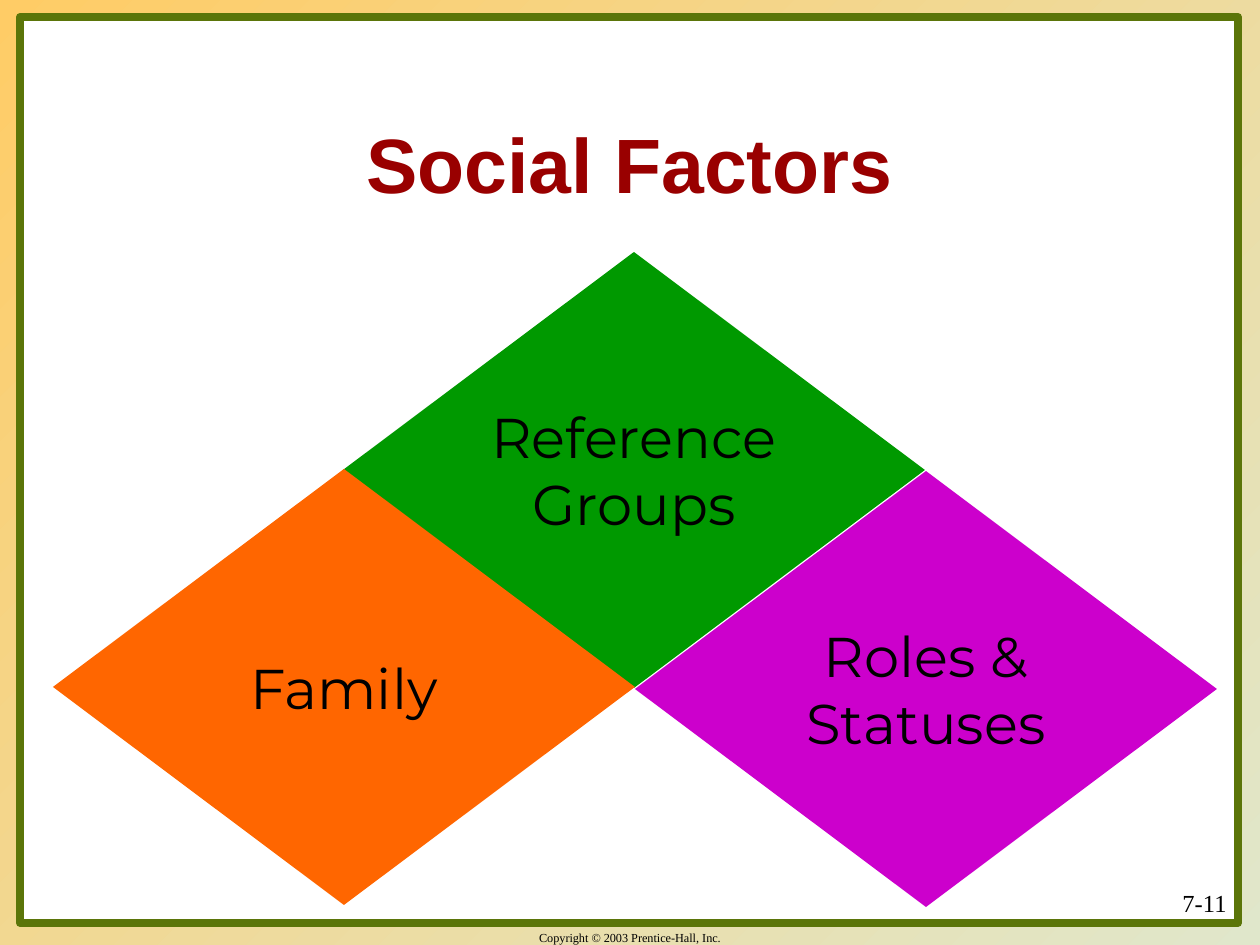
from pptx import Presentation
from pptx import util as u
from pptx.dml.color import RGBColor
from pptx.enum import shapes, text

PX_PER_INCH = 126
DIAMOND_WIDTH, DIAMOND_HEIGHT = 582, 436
DIAMONDS = [
    (343, 252, "009900", ["Reference", "Groups"]),
    (635, 471, "CC00CC", ["Roles &", "Statuses"]),
    (53, 469, "FF6600", ["Family"]),
]


def px(length):
    return u.Emu(round(length * u.Inches(1) / PX_PER_INCH))


def color(hex_string):
    return RGBColor.from_string(hex_string)


def write(shape, lines, size, font="Times New Roman", fill="000000", bold=False,
          align=text.PP_ALIGN.CENTER, anchor=text.MSO_ANCHOR.TOP, wrap=True):
    """Put one paragraph per line into the shape."""
    frame = shape.text_frame
    frame.word_wrap = wrap
    frame.vertical_anchor = anchor
    frame.text = "\n".join(lines)
    for paragraph in frame.paragraphs:
        paragraph.alignment = align
        paragraph.font.name = font
        paragraph.font.size = u.Pt(size)
        paragraph.font.bold = bold
        paragraph.font.color.rgb = color(fill)


def add_label(slide, box, label, size, **style):
    write(slide.shapes.add_textbox(*map(px, box)), [label], size, **style)


def add_filled(slide, kind, box, fill, line=None, line_width=0):
    shape = slide.shapes.add_shape(kind, *map(px, box))
    shape.shadow.inherit = False
    shape.fill.solid()
    shape.fill.fore_color.rgb = color(fill)
    if line:
        shape.line.color.rgb = color(line)
        shape.line.width = u.Pt(line_width)
    else:
        shape.line.fill.background()
    return shape


def set_background(slide, start, end):
    """Blend from the top left corner to the bottom right one."""
    fill = slide.background.fill
    fill.gradient()
    fill.gradient_angle = 315
    for stop, position, stop_color in zip(fill.gradient_stops, (0, 1), (start, end)):
        stop.position = position
        stop.color.rgb = color(stop_color)


def main():
    presentation = Presentation()
    presentation.slide_width, presentation.slide_height = px(1260), px(945)
    slide = presentation.slides.add_slide(presentation.slide_layouts[6])

    set_background(slide, "FFCC66", "E0E7CB")
    add_filled(slide, shapes.MSO_SHAPE.RECTANGLE, (20, 17, 1218, 906), "FFFFFF",
               line="5B7509", line_width=4.5)
    add_label(slide, (430, 924, 400, 21), "Copyright © 2003 Prentice-Hall, Inc.", 7)
    add_label(slide, (977, 882, 262, 63), "7-11", 14, align=text.PP_ALIGN.RIGHT)
    add_label(slide, (95, 84, 1070, 158), "Social Factors", 44, font="Arial",
              fill="990000", bold=True, anchor=text.MSO_ANCHOR.MIDDLE)

    for left, top, fill, lines in DIAMONDS:
        diamond = add_filled(slide, shapes.MSO_SHAPE.DIAMOND,
                             (left, top, DIAMOND_WIDTH, DIAMOND_HEIGHT), fill)
        write(diamond, lines, 32, font="Montserrat",
              anchor=text.MSO_ANCHOR.MIDDLE, wrap=False)

    presentation.save("out.pptx")


if __name__ == "__main__":
    main()
